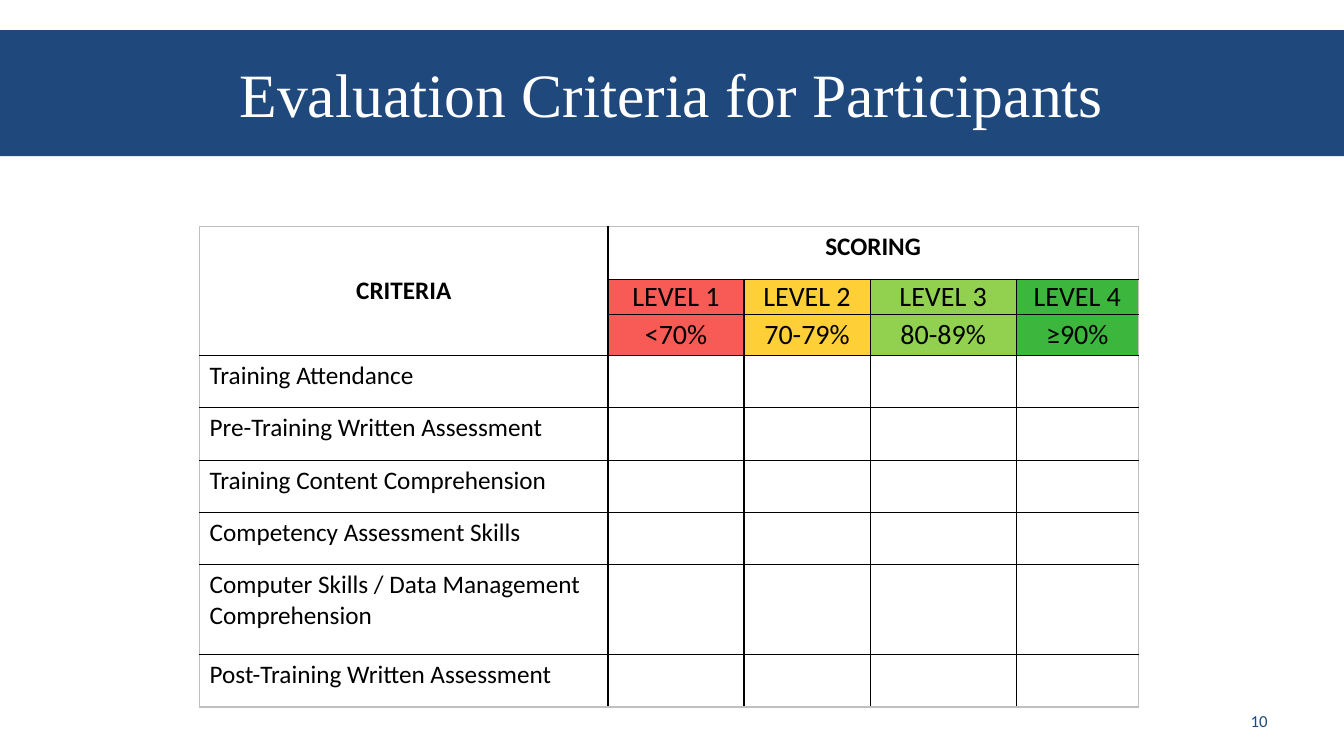
from dataclasses import dataclass

from lxml import etree
from pptx import Presentation
from pptx.dml.color import RGBColor
from pptx.enum import shapes, text
from pptx.oxml import ns
from pptx.util import Inches, Pt


@dataclass(frozen=True)
class Theme:
    navy: str = "1F497D"
    white: str = "FFFFFF"
    black: str = "000000"
    edge: str = "BFBFBF"
    body_font: str = "Calibri"
    title_font: str = "Times New Roman"
    title_size: int = 44
    level_size: int = 20
    body_size: int = 18
    number_size: int = 12


LEVELS = [
    ("LEVEL 1", "<70%", "F85A56"),
    ("LEVEL 2", "70-79%", "FFCF37"),
    ("LEVEL 3", "80-89%", "92D050"),
    ("LEVEL 4", "≥90%", "3CB63C"),
]
CRITERIA = [
    "Training Attendance",
    "Pre-Training Written Assessment",
    "Training Content Comprehension",
    "Competency Assessment Skills",
    "Computer Skills / Data Management Comprehension",
    "Post-Training Written Assessment",
]
COLUMN_WIDTHS = [4.05, 1.35, 1.25, 1.45, 1.21]
HEADER_HEIGHTS = [0.52, 0.35, 0.4]
ROW_HEIGHT, TALL_ROW_HEIGHT = 0.52, 0.89
LEFT, CENTER, RIGHT = text.PP_ALIGN.LEFT, text.PP_ALIGN.CENTER, text.PP_ALIGN.RIGHT
TOP, MIDDLE = text.MSO_ANCHOR.TOP, text.MSO_ANCHOR.MIDDLE


class SlideBuilder:
    def __init__(self, slide, theme):
        self.s = slide
        self.theme = theme

    def put_text(self, tf, words, size, color, align=LEFT, font=None, bold=False):
        tf.text = words
        tf.word_wrap = True
        p = tf.paragraphs[0]
        p.alignment = align
        for r in p.runs:
            r.font.name = font or self.theme.body_font
            r.font.size = Pt(size)
            r.font.bold = bold
            r.font.color.rgb = RGBColor.from_string(color)

    def title_band(self, words, left, top, width, height):
        sp = self.s.shapes.add_shape(
            shapes.MSO_SHAPE.RECTANGLE,
            Inches(left), Inches(top), Inches(width), Inches(height))
        sp.shadow.inherit = False
        sp.fill.solid()
        sp.fill.fore_color.rgb = RGBColor.from_string(self.theme.navy)
        sp.line.fill.background()
        sp.text_frame.vertical_anchor = MIDDLE
        self.put_text(sp.text_frame, words, self.theme.title_size, self.theme.white,
                      CENTER, self.theme.title_font)

    def slide_number(self, words, left, top, width, height):
        sp = self.s.shapes.add_textbox(
            Inches(left), Inches(top), Inches(width), Inches(height))
        sp.text_frame.vertical_anchor = MIDDLE
        self.put_text(sp.text_frame, words, self.theme.number_size, self.theme.navy,
                      RIGHT)

    def table(self, left, top, widths, heights):
        table = self.s.shapes.add_table(
            len(heights), len(widths), Inches(left), Inches(top),
            Inches(sum(widths)), Inches(sum(heights))).table
        table.first_row = table.horz_banding = False
        for column, width in zip(table.columns, widths):
            column.width = Inches(width)
        for row, height in zip(table.rows, heights):
            row.height = Inches(height)
        return table

    def cell(self, cell, words="", fill=None, size=None, align=LEFT, anchor=TOP,
             bold=False):
        cell.fill.solid()
        cell.fill.fore_color.rgb = RGBColor.from_string(fill or self.theme.white)
        cell.vertical_anchor = anchor
        if words:
            self.put_text(cell.text_frame, words, size or self.theme.body_size,
                          self.theme.black, align, bold=bold)

    def level_cell(self, cell, words, fill):
        self.cell(cell, words, fill, self.theme.level_size, CENTER, MIDDLE)
        cell.margin_left = cell.margin_right = Inches(0.07)
        cell.margin_top = cell.margin_bottom = 0

    def borders(self, table):
        """Rule the inside in black and the outer edge in grey."""
        rows, columns = len(table.rows), len(table.columns)
        for i in range(rows):
            for j in range(columns):
                cell = table.cell(i, j)
                outer = {
                    "lnL": j == 0,
                    "lnR": j + cell.span_width == columns,
                    "lnT": i == 0,
                    "lnB": i + cell.span_height == rows,
                }
                tc_pr = cell._tc.get_or_add_tcPr()
                for index, (side, is_outer) in enumerate(outer.items()):
                    ln = etree.Element(ns.qn(f"a:{side}"), w=str(Pt(1)))
                    fill = etree.SubElement(ln, ns.qn("a:solidFill"))
                    color = self.theme.edge if is_outer else self.theme.black
                    etree.SubElement(fill, ns.qn("a:srgbClr"), val=color)
                    tc_pr.insert(index, ln)


def scoring_table(builder):
    heights = HEADER_HEIGHTS + [
        TALL_ROW_HEIGHT if "/" in name else ROW_HEIGHT for name in CRITERIA]
    table = builder.table(1.98, 2.25, COLUMN_WIDTHS, heights)
    first_row, last_column = len(HEADER_HEIGHTS), len(LEVELS)
    table.cell(0, 0).merge(table.cell(first_row - 1, 0))
    table.cell(0, 1).merge(table.cell(0, last_column))

    builder.cell(table.cell(0, 0), "CRITERIA", align=CENTER, anchor=MIDDLE, bold=True)
    builder.cell(table.cell(0, 1), "SCORING", align=CENTER, bold=True)
    for j, (level, score, color) in enumerate(LEVELS, 1):
        builder.level_cell(table.cell(1, j), level, color)
        builder.level_cell(table.cell(2, j), score, color)
    for i, name in enumerate(CRITERIA, first_row):
        builder.cell(table.cell(i, 0), name)
        for j in range(1, last_column + 1):
            builder.cell(table.cell(i, j))
    builder.borders(table)


def main():
    prs = Presentation()
    prs.slide_width, prs.slide_height = Inches(13.33), Inches(7.5)
    builder = SlideBuilder(prs.slides.add_slide(prs.slide_layouts[6]), Theme())
    scoring_table(builder)
    builder.slide_number("10", 9.56, 6.95, 3.11, 0.4)
    builder.title_band("Evaluation Criteria for Participants", 0, 0.3, 13.33, 1.25)
    prs.save("out.pptx")


if __name__ == "__main__":
    main()
